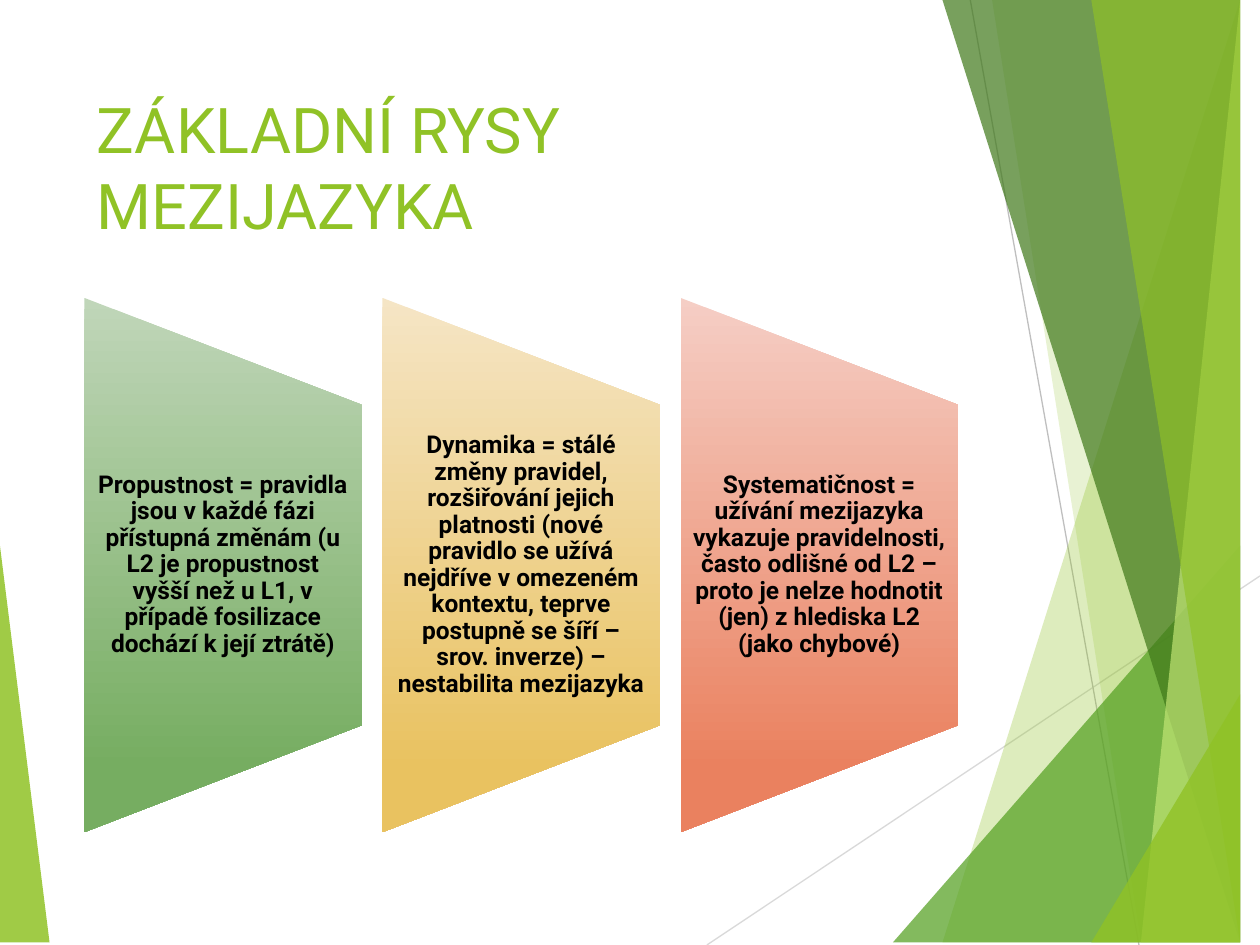
from lxml import etree
from pptx import Presentation
from pptx.dml.color import RGBColor
from pptx.enum.shapes import MSO_CONNECTOR, MSO_SHAPE
from pptx.enum.text import MSO_ANCHOR, PP_ALIGN
from pptx.oxml.ns import qn
from pptx.util import Cm, Pt

STRAIGHT = MSO_CONNECTOR.STRAIGHT
TRAPEZOID = MSO_SHAPE.FLOWCHART_MANUAL_OPERATION
TOP, MIDDLE = MSO_ANCHOR.TOP, MSO_ANCHOR.MIDDLE
LEFT, CENTER = PP_ALIGN.LEFT, PP_ALIGN.CENTER

FONT = "Roboto"
LIME, GREEN, DARK_GREEN, PALE_LIME = "90C226", "54A021", "3F7819", "C0E474"
WIDTH, HEIGHT = 25.4, 19.05
TOP_RIGHT, BOTTOM_RIGHT = (WIDTH, 0), (WIDTH, HEIGHT)

RAYS = [
    ((14.25, HEIGHT), (WIDTH, 11.61), "D9D9D9"),
    ((19.56, 0), (22.96, HEIGHT), "BFBFBF"),
]
FACETS = [
    ([(24.77, 0), (19.15, HEIGHT), BOTTOM_RIGHT, TOP_RIGHT], LIME, 30),
    ([(20.02, 0), (23.34, HEIGHT), BOTTOM_RIGHT, TOP_RIGHT], LIME, 20),
    ([(18.44, HEIGHT), (WIDTH, 10.9), BOTTOM_RIGHT], GREEN, 72),
    ([(19.48, 0), (24.64, HEIGHT), BOTTOM_RIGHT, TOP_RIGHT], DARK_GREEN, 70),
    ([(24.92, 0), (23.04, HEIGHT), BOTTOM_RIGHT, TOP_RIGHT], PALE_LIME, 70),
    ([(22.43, 0), (25.04, HEIGHT), BOTTOM_RIGHT, (25.35, 0)], LIME, 65),
    ([(22.38, HEIGHT), (WIDTH, 13.59), BOTTOM_RIGHT], LIME, 80),
]
LEFT_FACET = [(0, 11.15), (1.24, HEIGHT), (0, HEIGHT)]

FEATURES = [
    ("Propustnost = pravidla jsou v každé fázi přístupná změnám (u L2 je "
     "propustnost vyšší než u L1, v případě fosilizace dochází k její ztrátě)",
     "C0D6B9", "76AD61"),
    ("Dynamika = stálé změny pravidel, rozšiřování jejich platnosti (nové "
     "pravidlo se užívá nejdříve v omezeném kontextu, teprve postupně se šíří "
     "– srov. inverze) – nestabilita mezijazyka",
     "F5E5C5", "E9C260"),
    ("Systematičnost = užívání mezijazyka vykazuje pravidelnosti, často odlišné "
     "od L2 – proto je nelze hodnotit (jen) z hlediska L2 (jako chybové)",
     "F5CEC5", "EA815F"),
]
PANEL_LEFT, PANEL_PITCH, PANEL_MIDDLE = 1.7, 6.01, 11.39
PANEL_WIDTH, PANEL_HEIGHT, LABEL_HEIGHT = 5.59, 10.77, 6.48


def rgb(color):
    return RGBColor.from_string(color)


def add_facet(slide, points, color, opacity):
    builder = slide.shapes.build_freeform(*points[0], scale=Cm(1))
    builder.add_line_segments(points[1:], close=True)
    facet = builder.convert_to_shape()
    facet.shadow.inherit = False
    facet.fill.solid()
    facet.fill.fore_color.rgb = rgb(color)
    facet.line.fill.background()
    tint = facet.fill._xPr.find(".//" + qn("a:srgbClr"))
    etree.SubElement(tint, qn("a:alpha"), val=str(opacity * 1000))


def add_ray(slide, start, end, color):
    ray = slide.shapes.add_connector(
        STRAIGHT, *(Cm(length) for length in start + end))
    ray.line.color.rgb = rgb(color)
    ray.line.width = Pt(0.75)
    etree.SubElement(ray._element.spPr, qn("a:effectLst"))


def format_text(frame, size, color, bold, align, anchor):
    frame.word_wrap = True
    frame.vertical_anchor = anchor
    paragraph = frame.paragraphs[0]
    paragraph.alignment = align
    for run in paragraph.runs:
        run.font.name = FONT
        run.font.size = Pt(size)
        run.font.bold = bold
        run.font.color.rgb = rgb(color)


def add_title(slide, text):
    title = slide.shapes.title
    title.left, title.top = Cm(1.7), Cm(1.7)
    title.width, title.height = Cm(17.63), Cm(3.66)
    title.text_frame.text = text
    format_text(title.text_frame, 36, LIME, False, LEFT, TOP)
    slide.shapes._spTree.append(title._element)


def add_panel(slide, left, light, dark):
    panel = slide.shapes.add_shape(
        TRAPEZOID,
        Cm(left + (PANEL_WIDTH - PANEL_HEIGHT) / 2),
        Cm(PANEL_MIDDLE - PANEL_WIDTH / 2),
        Cm(PANEL_HEIGHT), Cm(PANEL_WIDTH))
    panel.rotation = 270
    panel.shadow.inherit = False
    panel.line.fill.background()
    panel.fill.gradient()
    panel.fill.gradient_angle = 270
    for stop, color, position in zip(
            panel.fill.gradient_stops, (light, dark), (0, 0.88)):
        stop.color.rgb = rgb(color)
        stop.position = position
    panel._element.spPr.find(qn("a:gradFill")).set("rotWithShape", "0")


def add_label(slide, left, text):
    label = slide.shapes.add_textbox(
        Cm(left), Cm(PANEL_MIDDLE - LABEL_HEIGHT / 2),
        Cm(PANEL_WIDTH), Cm(LABEL_HEIGHT))
    frame = label.text_frame
    frame.margin_top = frame.margin_bottom = 0
    frame.text = text
    frame.paragraphs[0].line_spacing = 0.9
    format_text(frame, 14, "000000", True, CENTER, MIDDLE)


def main():
    deck = Presentation()
    deck.slide_width, deck.slide_height = Cm(WIDTH), Cm(HEIGHT)
    slide = deck.slides.add_slide(deck.slide_layouts[5])
    add_facet(slide, LEFT_FACET, LIME, 85)
    for ray in RAYS:
        add_ray(slide, *ray)
    for facet in FACETS:
        add_facet(slide, *facet)
    add_title(slide, "ZÁKLADNÍ RYSY MEZIJAZYKA")
    for column, (text, light, dark) in enumerate(FEATURES):
        left = PANEL_LEFT + column * PANEL_PITCH
        add_panel(slide, left, light, dark)
        add_label(slide, left, text)
    deck.save("out.pptx")


if __name__ == "__main__":
    main()
